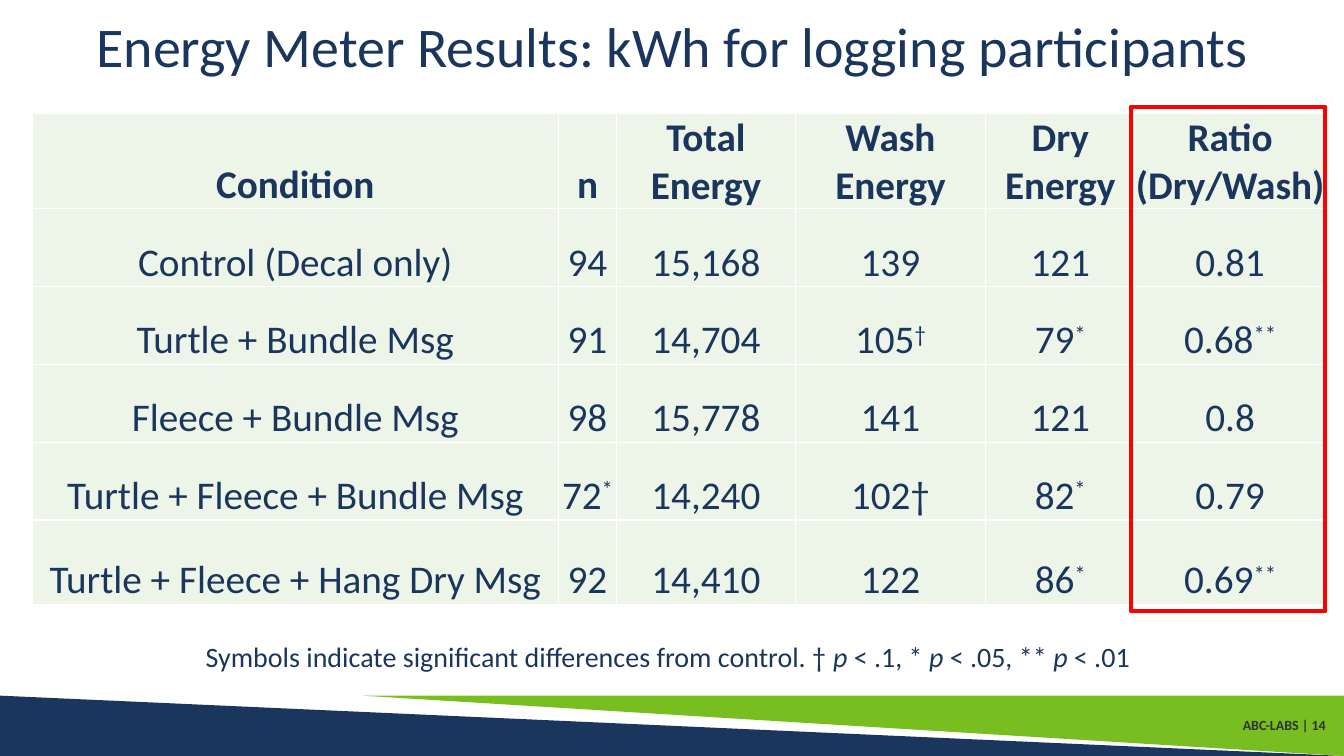
from lxml.etree import SubElement
from pptx import Presentation
from pptx.dml.color import RGBColor
from pptx.enum.shapes import MSO_SHAPE as Shape
from pptx.enum.text import MSO_ANCHOR as Anchor, MSO_AUTO_SIZE as AutoSize, PP_ALIGN as Align
from pptx.oxml import parse_xml
from pptx.oxml.ns import nsdecls, qn
from pptx.util import Cm, Pt

COLORS = {"navy": "1B365D", "green": "78BE20", "pale": "EDF4E8",
          "grey": "2E3438", "red": "FF0000", "white": "FFFFFF"}
FONT = "Calibri"
WIDTH, HEIGHT = 33.87, 19.05

# A caret starts the superscript mark of a value
RESULTS = [
    ["Condition", "n", "Total Energy", "Wash Energy", "Dry Energy", "Ratio (Dry/Wash)"],
    ["Control (Decal only)", "94", "15,168", "139", "121", "0.81"],
    ["Turtle + Bundle Msg", "91", "14,704", "105^†", "79^*", "0.68^**"],
    ["Fleece + Bundle Msg", "98", "15,778", "141", "121", "0.8"],
    ["Turtle + Fleece + Bundle Msg", "72^*", "14,240", "102†", "82^*", "0.79"],
    ["Turtle + Fleece + Hang Dry Msg", "92", "14,410", "122", "86^*", "0.69^**"],
]
COLUMN_WIDTHS = [13.26, 1.47, 4.5, 4.8, 3.76, 4.8]
ROW_HEIGHTS = [2.18, 1.96, 1.96, 1.96, 1.96, 2.13]


def rgb(name):
    return RGBColor.from_string(COLORS[name])


def add_text(paragraph, text, size, color="navy", bold=False, italic=False,
             align=None, spacing=None, raised=False):
    """Append one formatted run to the paragraph."""
    run = paragraph.add_run()
    run.text = text
    font = run.font
    font.name, font.size, font.bold, font.italic = FONT, Pt(size), bold, italic
    font.color.rgb = rgb(color)
    if align is not None:
        paragraph.alignment = align
    if spacing is not None:
        paragraph.line_spacing = spacing
    if raised:
        run._r.get_or_add_rPr().set("baseline", "30000")


def add_block(slide, kind, left, top, width, height, fill=None, line=None):
    shape = slide.shapes.add_shape(kind, Cm(left), Cm(top), Cm(width), Cm(height))
    shape.shadow.inherit = False
    if fill:
        shape.fill.solid()
        shape.fill.fore_color.rgb = rgb(fill)
    else:
        shape.fill.background()
    if line:
        shape.line.color.rgb = rgb(line)
        shape.line.width = Pt(3)
    else:
        shape.line.fill.background()
    return shape


def add_footer(slide, left, top, width, height):
    # Crossing wedges
    green_left = 9.14
    add_block(slide, Shape.RIGHT_TRIANGLE, left, top, width, height, fill="navy")
    wedge = add_block(slide, Shape.RIGHT_TRIANGLE, left + green_left, top,
                      width - green_left, height, fill="green")
    wedge.rotation = 180
    # Page label
    label = slide.shapes.add_textbox(Cm(left + width - 4.05), Cm(top + 0.3), Cm(3.84), Cm(0.94))
    frame = label.text_frame
    frame.word_wrap = True
    frame.vertical_anchor = Anchor.MIDDLE
    add_text(frame.paragraphs[0], "ABC-LABS | 14", 10, color="grey", bold=True,
             align=Align.RIGHT, spacing=0.9)


def add_title(slide, left, top, width, height):
    title = slide.shapes.title
    title.left, title.top, title.width, title.height = map(Cm, (left, top, width, height))
    frame = title.text_frame
    frame.auto_size = AutoSize.NONE
    frame.vertical_anchor = Anchor.MIDDLE
    add_text(frame.paragraphs[0], "Energy Meter Results: kWh for logging participants", 40,
             align=Align.CENTER, spacing=0.9)


def add_note(slide, left, top, width, height):
    box = slide.shapes.add_textbox(Cm(left), Cm(top), Cm(width), Cm(height))
    frame = box.text_frame
    frame.word_wrap = False
    frame.auto_size = AutoSize.SHAPE_TO_FIT_TEXT
    parts = ["Symbols indicate significant differences from control. † ",
             "p ", "< .1, * ", "p", " < .05, ** ", "p", " < .01"]
    for index, part in enumerate(parts):
        add_text(frame.paragraphs[0], part, 20, italic=index % 2 == 1)


def add_borders(cell):
    properties = cell._tc.get_or_add_tcPr()
    for position, side in enumerate(("lnL", "lnR", "lnT", "lnB")):
        border = parse_xml(f'<a:{side} {nsdecls("a")} w="12700"/>')
        fill = SubElement(border, qn("a:solidFill"))
        SubElement(fill, qn("a:srgbClr"), val=COLORS["white"])
        properties.insert(position, border)


def fill_cell(cell, value, bold):
    cell.margin_left = cell.margin_right = cell.margin_top = Cm(0.02)
    cell.margin_bottom = 0
    cell.vertical_anchor = Anchor.BOTTOM
    cell.fill.solid()
    cell.fill.fore_color.rgb = rgb("pale")
    add_borders(cell)
    text, _, mark = value.partition("^")
    paragraph = cell.text_frame.paragraphs[0]
    add_text(paragraph, text, 28, bold=bold, align=Align.CENTER)
    if mark:
        add_text(paragraph, mark, 28, bold=bold, raised=True)


def add_results(slide, left, top):
    width, height = sum(COLUMN_WIDTHS), sum(ROW_HEIGHTS)
    table = slide.shapes.add_table(len(RESULTS), len(COLUMN_WIDTHS), Cm(left), Cm(top),
                                   Cm(width), Cm(height)).table
    for column, column_width in zip(table.columns, COLUMN_WIDTHS):
        column.width = Cm(column_width)
    for row, row_height in zip(table.rows, ROW_HEIGHTS):
        row.height = Cm(row_height)
    for row_index, values in enumerate(RESULTS):
        for column_index, value in enumerate(values):
            fill_cell(table.cell(row_index, column_index), value, bold=row_index == 0)
    # Frame around the ratio column
    frame_width = COLUMN_WIDTHS[-1] + 0.1
    add_block(slide, Shape.RECTANGLE, left + width - frame_width, top - 0.18,
              frame_width, height + 0.56, line="red")


def main():
    presentation = Presentation()
    presentation.slide_width, presentation.slide_height = Cm(WIDTH), Cm(HEIGHT)
    slide = presentation.slides.add_slide(presentation.slide_layouts[5])
    add_footer(slide, 0, HEIGHT - 1.52, WIDTH, 1.52)
    add_title(slide, 0, 0, WIDTH, 2.51)
    add_note(slide, 4.93, 16, 24.03, 1.12)
    add_results(slide, 0.81, 2.87)
    presentation.save("out.pptx")


if __name__ == "__main__":
    main()
